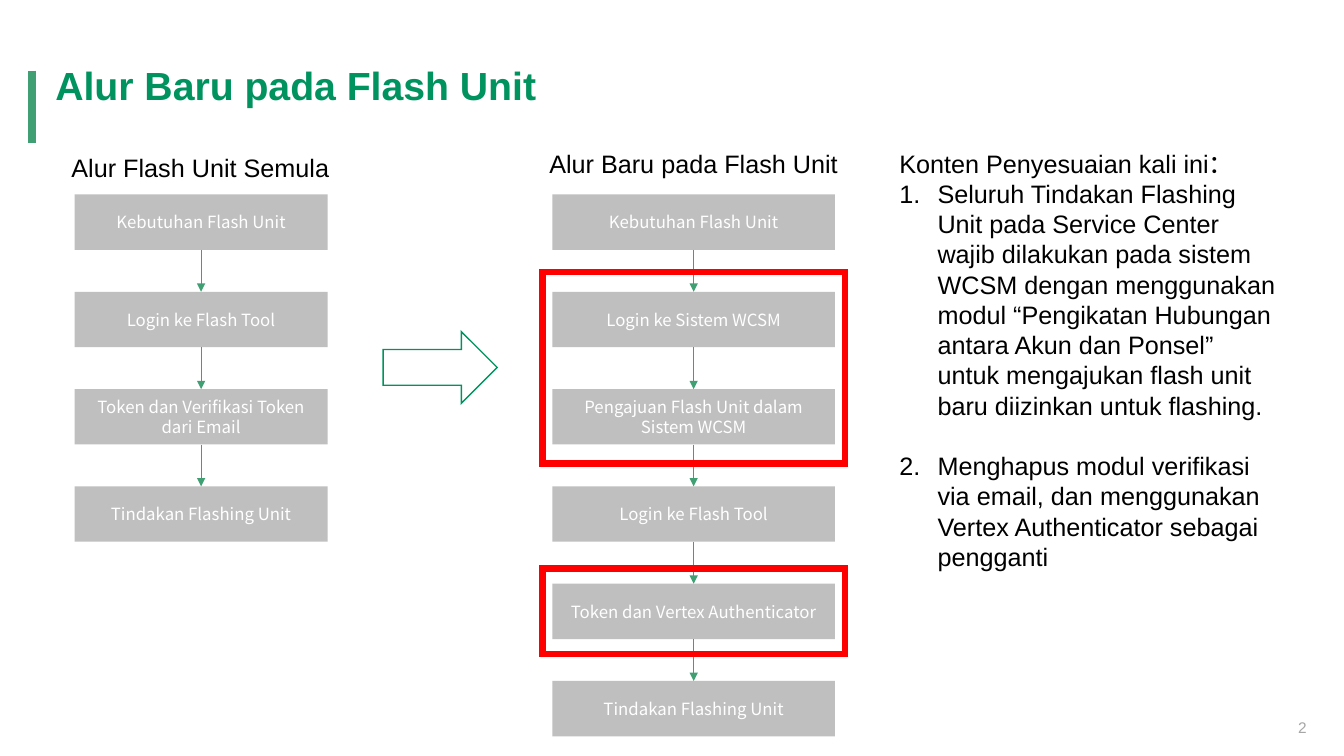
import dataclasses
import itertools
import typing

import lxml.etree
import pptx
import pptx.dml.color
import pptx.enum.shapes
import pptx.enum.text
import pptx.oxml.ns
import pptx.util

SHAPES = pptx.enum.shapes.MSO_SHAPE
ALIGN = pptx.enum.text.PP_ALIGN
WIDTH = pptx.util.Inches(13.33)
HEIGHT = pptx.util.Inches(7.5)
GREEN = "00925F"
SOFT_GREEN = "409F73"
GRAY = "BFBFBF"
RED = "FF0000"
WHITE = "FFFFFF"
BLACK = "000000"
STEP_TOP, STEP_PITCH, STEP_HEIGHT = 25.73, 12.87, 7.33
NOTE_LINE = pptx.util.Pt(21.6)


@dataclasses.dataclass(frozen=True)
class Area:
    """Percentages of the slide's width and height."""
    left: float
    top: float
    width: float
    height: float

    def lengths(self) -> tuple[int, int, int, int]:
        return (across(self.left), down(self.top), across(self.width), down(self.height))


@dataclasses.dataclass(frozen=True)
class TextStyle:
    size: float
    color: str = BLACK
    font: str = "Arial"
    bold: bool = False


@dataclasses.dataclass(frozen=True)
class Label:
    text: str
    area: Area
    style: TextStyle
    align: typing.Any = ALIGN.LEFT
    wrap: bool = True


@dataclasses.dataclass(frozen=True)
class Flow:
    left: float
    width: float
    steps: tuple[str, ...]


BODY = TextStyle(18)
STEP = TextStyle(12, WHITE, "Noto Sans CJK SC")
LABELS = (
    Label("2", Area(91.37, 94.27, 6.6, 3.87), TextStyle(11, "A6A6A6"), ALIGN.RIGHT),
    Label("Alur Baru pada Flash Unit", Area(3.38, 7.47, 37.73, 7.6),
          TextStyle(28, GREEN, bold=True), wrap=False),
    Label("Alur Flash Unit Semula", Area(4.58, 19.47, 22.21, 5.33), BODY),
    Label("Alur Baru pada Flash Unit", Area(40.13, 18.93, 23.63, 5.33), BODY),
)
FLOWS = (
    Flow(5.55, 18.83, (
        "Kebutuhan Flash Unit",
        "Login ke Flash Tool",
        "Token dan Verifikasi Token dari Email",
        "Tindakan Flashing Unit",
    )),
    Flow(41.11, 21.01, (
        "Kebutuhan Flash Unit",
        "Login ke Sistem WCSM",
        "Pengajuan Flash Unit dalam Sistem WCSM",
        "Login ke Flash Tool",
        "Token dan Vertex Authenticator",
        "Tindakan Flashing Unit",
    )),
)
HIGHLIGHTS = (Area(40.36, 36, 22.51, 25.33), Area(40.36, 75.2, 22.51, 11.33))
CHANGE_ARROW = Area(28.51, 43.87, 8.48, 9.47)
NOTES_AREA = Area(66.17, 18.93, 29.71, 57.87)
NOTES_HEADING = "Konten Penyesuaian kali ini："
NOTES = (
    "Seluruh Tindakan Flashing Unit pada Service Center wajib dilakukan pada sistem WCSM "
    "dengan menggunakan modul “Pengikatan Hubungan antara Akun dan Ponsel” "
    "untuk mengajukan flash unit baru diizinkan untuk flashing.",
    "Menghapus modul verifikasi via email, dan menggunakan Vertex Authenticator "
    "sebagai pengganti",
)


def across(share: float) -> int:
    return round(WIDTH * share / 100)


def down(share: float) -> int:
    return round(HEIGHT * share / 100)


def color(value: str) -> pptx.dml.color.RGBColor:
    return pptx.dml.color.RGBColor.from_string(value)


def add_element(parent: typing.Any, tag: str, **attributes: str) -> None:
    lxml.etree.SubElement(parent, pptx.oxml.ns.qn(tag), attributes)


def write(paragraph: typing.Any, text: str, style: TextStyle) -> None:
    run = paragraph.add_run()
    run.text = text
    run.font.size = pptx.util.Pt(style.size)
    run.font.name = style.font
    run.font.bold = style.bold
    run.font.color.rgb = color(style.color)


def add_label(slide: typing.Any, label: Label) -> None:
    frame = slide.shapes.add_textbox(*label.area.lengths()).text_frame
    frame.word_wrap = label.wrap
    frame.paragraphs[0].alignment = label.align
    write(frame.paragraphs[0], label.text, label.style)


def add_notes(slide: typing.Any) -> None:
    frame = slide.shapes.add_textbox(*NOTES_AREA.lengths()).text_frame
    frame.word_wrap = True
    heading = frame.paragraphs[0]
    heading.line_spacing = NOTE_LINE
    write(heading, NOTES_HEADING, BODY)
    indent = pptx.util.Inches(0.38)
    for index, note in enumerate(NOTES):
        paragraph = frame.add_paragraph()
        paragraph.line_spacing = NOTE_LINE
        paragraph.space_before = NOTE_LINE if index else 0
        properties = paragraph._p.get_or_add_pPr()
        properties.set("marL", str(indent))
        properties.set("indent", str(-indent))
        add_element(properties, "a:buFont", typeface="+mj-lt")
        add_element(properties, "a:buAutoNum", type="arabicPeriod")
        write(paragraph, note, BODY)


def add_filled(slide: typing.Any, area: Area, fill: str) -> typing.Any:
    shape = slide.shapes.add_shape(SHAPES.RECTANGLE, *area.lengths())
    shape.shadow.inherit = False
    shape.fill.solid()
    shape.fill.fore_color.rgb = color(fill)
    shape.line.fill.background()
    return shape


def add_outline(slide: typing.Any, kind: typing.Any, area: Area, line: str, width: float) -> None:
    shape = slide.shapes.add_shape(kind, *area.lengths())
    shape.shadow.inherit = False
    shape.fill.background()
    shape.line.color.rgb = color(line)
    shape.line.width = pptx.util.Pt(width)
    add_element(shape.line._get_or_add_ln(), "a:miter", lim="800000")


def add_line(slide: typing.Any, ends: tuple[int, int, int, int], width: float) -> typing.Any:
    connector = slide.shapes.add_connector(pptx.enum.shapes.MSO_CONNECTOR.STRAIGHT, *ends)
    connector.line.color.rgb = color(SOFT_GREEN)
    connector.line.width = pptx.util.Pt(width)
    add_element(connector._element.spPr, "a:effectLst")
    return connector


def add_flow(slide: typing.Any, flow: Flow) -> None:
    boxes = []
    for index, text in enumerate(flow.steps):
        area = Area(flow.left, STEP_TOP + index * STEP_PITCH, flow.width, STEP_HEIGHT)
        box = add_filled(slide, area, GRAY)
        box.text_frame.word_wrap = True
        box.text_frame.vertical_anchor = pptx.enum.text.MSO_ANCHOR.MIDDLE
        paragraph = box.text_frame.paragraphs[0]
        paragraph.alignment = ALIGN.CENTER
        write(paragraph, text, STEP)
        boxes.append(box)
    for upper, lower in itertools.pairwise(boxes):
        center = upper.left + upper.width // 2
        connector = add_line(slide, (center, upper.top + upper.height, center, lower.top), 0.5)
        connector.begin_connect(upper, 2)
        connector.end_connect(lower, 0)
        add_element(connector.line._get_or_add_ln(), "a:tailEnd", type="triangle")


def main() -> None:
    presentation = pptx.Presentation()
    presentation.slide_width = WIDTH
    presentation.slide_height = HEIGHT
    slide = presentation.slides.add_slide(presentation.slide_layouts[6])
    add_line(slide, (across(2.4), down(9.33), across(2.4), down(18.93)), 6)
    for label in LABELS:
        add_label(slide, label)
    add_notes(slide)
    for flow in FLOWS:
        add_flow(slide, flow)
    add_outline(slide, SHAPES.RIGHT_ARROW, CHANGE_ARROW, GREEN, 1)
    for area in HIGHLIGHTS:
        add_outline(slide, SHAPES.RECTANGLE, area, RED, 4.5)
    presentation.save("out.pptx")


if __name__ == "__main__":
    main()
